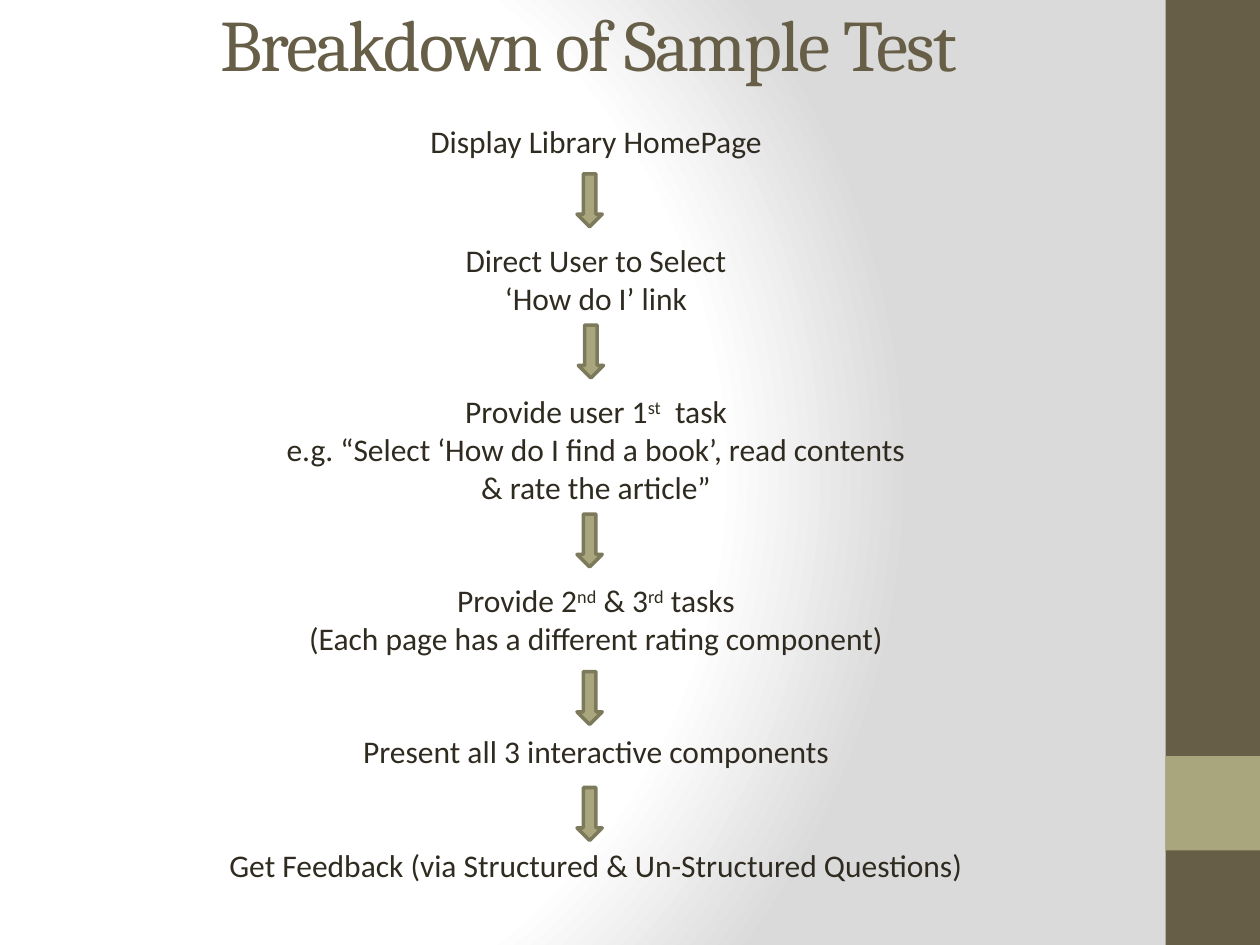
"""Build the sample test breakdown slide."""
from lxml import etree
from pptx import Presentation
from pptx.dml.color import RGBColor
from pptx.enum.shapes import MSO_SHAPE
from pptx.enum.text import MSO_ANCHOR, PP_ALIGN
from pptx.oxml.ns import qn
from pptx.util import Inches, Pt

COLORS = {
    "white": "FFFFFF", "gray": "DADADA", "brown": "675E47",
    "olive": "A9A57C", "edge": "7D7A5C", "text": "2F2B20",
}
RGB = {name: RGBColor.from_string(value) for name, value in COLORS.items()}
TITLE_FONT = {"name": "Cambria", "size": Pt(41.4)}
BODY_FONT = {"name": "Calibri", "size": Pt(18)}
LINE = 21.6
STEPS = [
    [["Display Library HomePage"]],
    [["Direct User to Select"], ["‘How do I’ link"]],
    [["Provide user 1", "st", "  task"],
     ["e.g. “Select ‘How do I find a book’, read contents"],
     ["& rate the article”"]],
    [["Provide 2", "nd", " & 3", "rd", " tasks"],
     ["(Each page has a different rating component)"]],
    [["Present all 3 interactive components"]],
    [["Get Feedback (via Structured & Un-Structured Questions)"]],
]


def add_shape(kind, x, y, w, h, color):
    sp = s.shapes.add_shape(kind, Inches(x), Inches(y), Inches(w), Inches(h))
    sp.shadow.inherit = False
    sp.fill.solid()
    sp.fill.fore_color.rgb = RGB[color]
    sp.line.fill.background()
    return sp


def add_run(p, text, fmt, color):
    r = p.add_run()
    r.text = text
    for key, value in fmt.items():
        setattr(r.font, key, value)
    r.font.color.rgb = RGB[color]
    return r


prs = Presentation()
prs.slide_width, prs.slide_height = Inches(10), Inches(7.5)
s = prs.slides.add_slide(prs.slide_layouts[6])

s.background.fill.gradient()
grad = s.element.find(".//" + qn("a:gradFill"))
for child in list(grad):
    grad.remove(child)
stops = etree.SubElement(grad, qn("a:gsLst"))
for pos, color in [(0, "white"), (75, "white"), (100, "gray")]:
    stop = etree.SubElement(stops, qn("a:gs"), pos=str(pos * 1000))
    etree.SubElement(stop, qn("a:srgbClr"), val=COLORS[color])
circle = etree.SubElement(grad, qn("a:path"), path="circle")
etree.SubElement(circle, qn("a:fillToRect"), l="20000", t="50000", r="100000", b="50000")

add_shape(MSO_SHAPE.RECTANGLE, 9.25, 0, 0.75, 7.5, "brown")
add_shape(MSO_SHAPE.RECTANGLE, 9.25, 6, 0.75, 0.75, "olive")

tf = s.shapes.add_textbox(Inches(0.17), 0, Inches(9), Inches(0.68)).text_frame
tf.word_wrap = True
tf.vertical_anchor = MSO_ANCHOR.MIDDLE
p = tf.paragraphs[0]
p.alignment = PP_ALIGN.CENTER
r = add_run(p, "Breakdown of Sample Test", TITLE_FONT, "brown")
r.font._element.set("spc", "-100")

tf = s.shapes.add_textbox(Inches(0.17), Inches(0.92), Inches(9), Inches(6.25)).text_frame
tf.word_wrap = True
tf.margin_left = Inches(0.22)
for i, step in enumerate(STEPS):
    for j, parts in enumerate(step):
        p = tf.add_paragraph() if i or j else tf.paragraphs[0]
        p.alignment = PP_ALIGN.CENTER
        p.line_spacing = Pt(LINE)
        if i and not j:
            p.space_before = Pt(2 * LINE + (3 if i == 1 else 0))
        for k, text in enumerate(parts):
            r = add_run(p, text, BODY_FONT, "text")
            if k % 2:
                r.font._element.set("baseline", "30000")

for x, y in [(4.58, 1.38), (4.59, 2.58), (4.58, 4.08), (4.58, 5.33), (4.58, 6.25)]:
    sp = add_shape(MSO_SHAPE.DOWN_ARROW, x, y, 0.2, 0.42, "olive")
    sp.line.color.rgb = RGB["edge"]
    sp.line.width = Pt(2)

prs.save("out.pptx")
